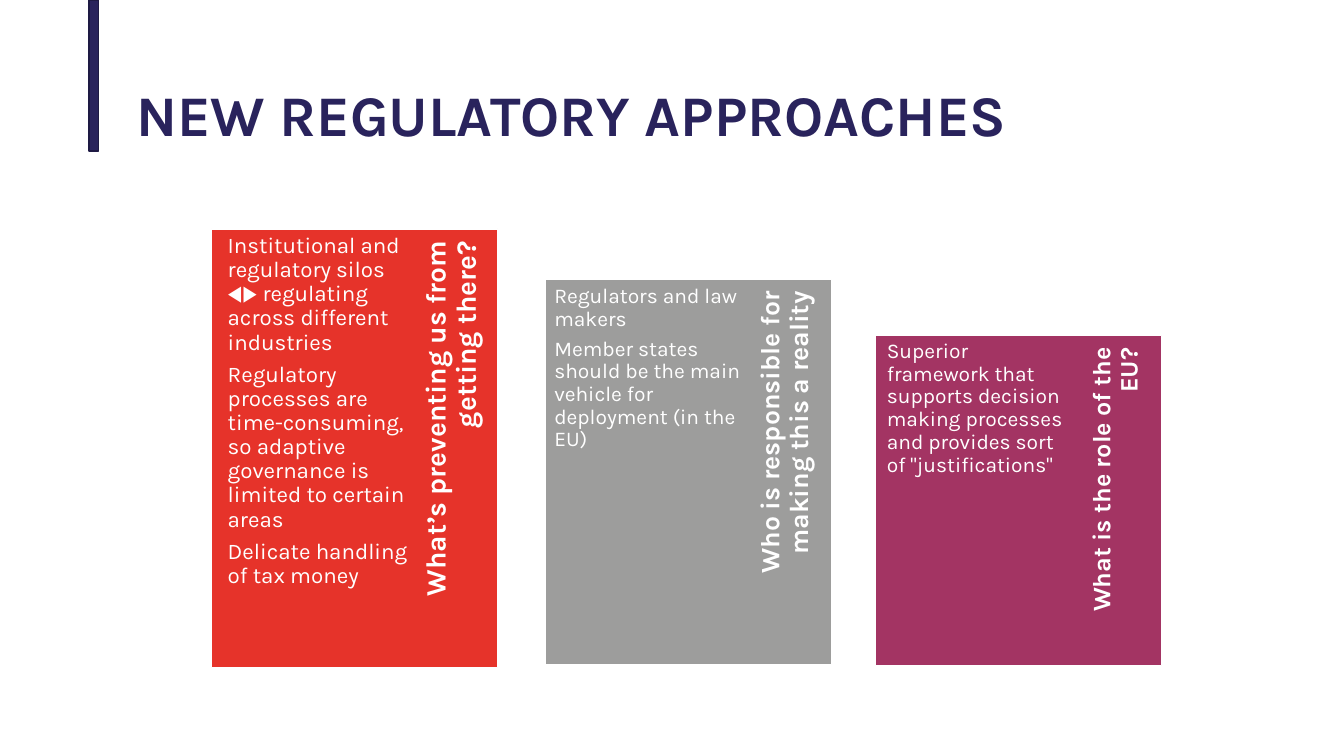
from pptx import Presentation
from pptx.dml.color import RGBColor
from pptx.enum.shapes import MSO_SHAPE
from pptx.enum.text import MSO_ANCHOR, PP_ALIGN
from pptx.util import Cm, Pt

NAVY, WHITE = "29235C", "FFFFFF"
PANEL_WIDTH = 7.21
LABEL_HEIGHT = 1.88
LABEL_INSET = 1.12  # from the panel's right edge to the middle of its label


def add_panel(left, top, width, height, fill, line):
    panel = page.shapes.add_shape(MSO_SHAPE.RECTANGLE, Cm(left), Cm(top), Cm(width), Cm(height))
    panel.shadow.inherit = False
    panel.fill.solid()
    panel.fill.fore_color.rgb = RGBColor.from_string(fill)
    panel.line.color.rgb = RGBColor.from_string(line)
    panel.line.width = Pt(1)


def add_text(left, top, width, height, paragraphs, size, color, insets, bold=False,
             anchor=MSO_ANCHOR.TOP, align=PP_ALIGN.LEFT):
    """Add a wrapped text box; insets are left, top, right and bottom in cm."""
    box = page.shapes.add_textbox(Cm(left), Cm(top), Cm(width), Cm(height))
    frame = box.text_frame
    frame.word_wrap = True
    frame.vertical_anchor = anchor
    frame.margin_left, frame.margin_top, frame.margin_right, frame.margin_bottom = map(Cm, insets)
    frame.text = "\n".join(paragraphs)
    for para in frame.paragraphs:
        para.alignment = align
        para.line_spacing = 0.9
        para.space_after = Pt(round(size * 0.35, 1))
        for span in para.runs:
            span.font.name = "Karla"
            span.font.size = Pt(size)
            span.font.bold = bold
            span.font.color.rgb = RGBColor.from_string(color)
    return box


deck = Presentation()
deck.slide_width, deck.slide_height = Cm(33.87), Cm(19.05)
page = deck.slides.add_slide(deck.slide_layouts[6])

add_panel(2.24, 0, 0.25, 3.81, NAVY, "1E1A44")
title = add_text(3.18, 1.02, 28.35, 3.68, ["NEW REGULATORY APPROACHES"], 41, NAVY,
                 (0.25, 0.13, 0.25, 0.13), bold=True, anchor=MSO_ANCHOR.MIDDLE)
title.text_frame.paragraphs[0].line_spacing = 1.0
title.text_frame.paragraphs[0].space_after = Pt(0)

# left, top, height, fill, question, question size, answers, answer size,
# answer left, answer top, answer width, answer inset
panels = [
    (5.33, 5.77, 11.05, "E6332A", "What’s preventing us from getting there?", 20,
     ["Institutional and regulatory silos ◀▶ regulating across different industries",
      "Regulatory processes are time-consuming, so adaptive governance is limited to certain areas",
      "Delicate handling of tax money"], 16, 5.56, 5.72, 5.18, 0.18),
    (13.74, 7.04, 9.7, "9D9D9C", "Who is responsible for making this a reality", 19,
     ["Regulators and law makers",
      "Member states should be the main vehicle for deployment (in the EU)"],
     15, 13.82, 7.04, 5.13, 0.15),
    (22.07, 8.46, 8.31, "A33463", "What is the role of the EU?", 18,
     ["Superior framework that supports decision making processes and provides sort "
      "of \"justifications\""], 15, 22.2, 8.43, 5.05, 0.15),
]

for (left, top, height, fill, question, question_size, answers, answer_size,
     answer_left, answer_top, answer_width, inset) in panels:
    add_panel(left, top, PANEL_WIDTH, height, fill, WHITE)

    # The label reads upwards along the right side, ending at the panel's top
    length = height * 0.9
    middle_x = left + PANEL_WIDTH - LABEL_INSET
    middle_y = top + length / 2
    label = add_text(middle_x - length / 2, middle_y - LABEL_HEIGHT / 2, length, LABEL_HEIGHT,
                     [question], question_size, WHITE, (0.2, 0, 0.3, 0.08), bold=True,
                     anchor=MSO_ANCHOR.MIDDLE, align=PP_ALIGN.RIGHT)
    label.rotation = 270

    add_text(answer_left, answer_top, answer_width, height, answers, answer_size, WHITE,
             (inset,) * 4)

deck.save("out.pptx")
